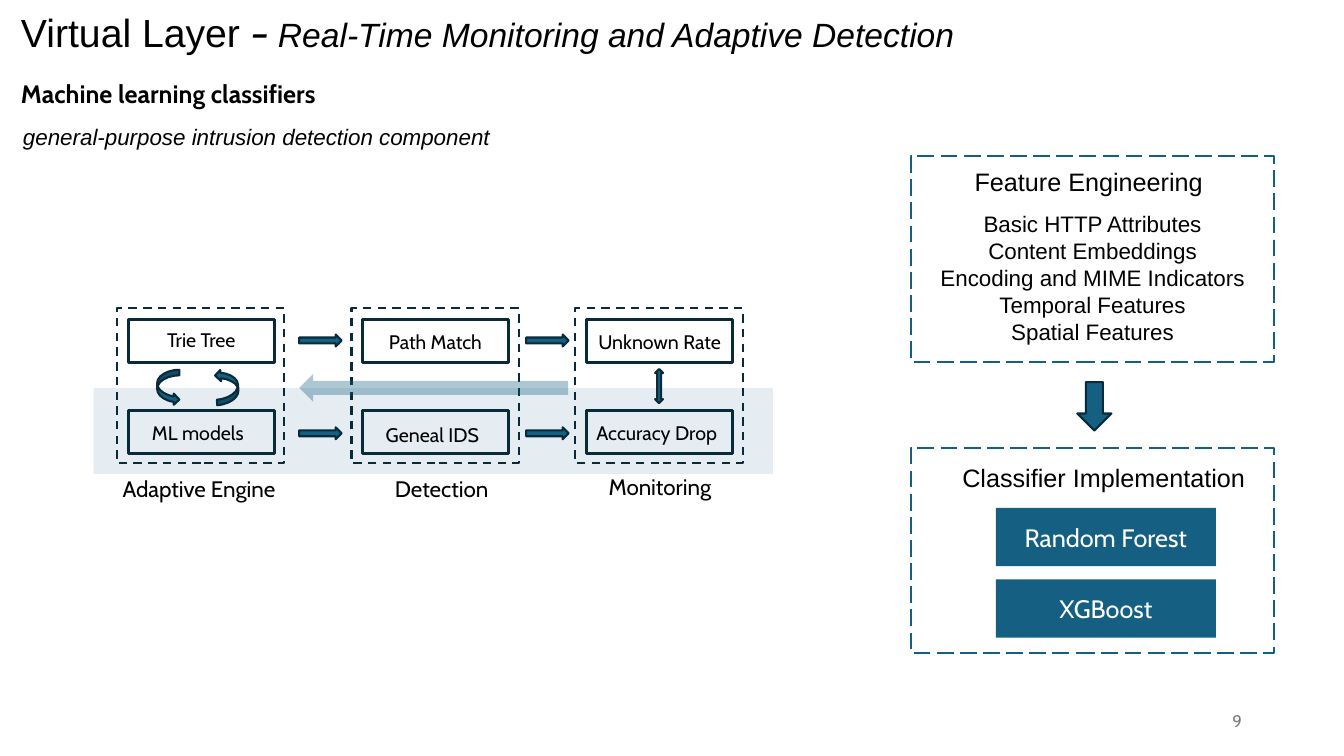
from lxml.etree import SubElement
from pptx import Presentation
from pptx.dml.color import RGBColor
from pptx.enum.dml import MSO_LINE
from pptx.enum.shapes import MSO_SHAPE
from pptx.enum.text import MSO_ANCHOR, PP_ALIGN
from pptx.oxml.ns import qn
from pptx.util import Cm, Pt

TEAL, NAVY, BLACK, WHITE = "156082", "092A39", "000000", "FFFFFF"

# Text formats
TITLE = {"name": "Arial", "size": Pt(28)}
DASH = {"name": "Cabin", "size": Pt(28), "italic": True}
TOPIC = {"name": "Arial", "size": Pt(24), "italic": True}
SUBTITLE = {"name": "Cabin", "size": Pt(18), "bold": True}
REMARK = {"name": "Arial", "size": Pt(16), "italic": True}
HEADING = {"name": "Arial", "size": Pt(18)}
FEATURE = {"name": "Arial", "size": Pt(16)}
CLASSIFIER = {"name": "Cabin", "size": Pt(18)}
STEP = {"name": "Cabin", "size": Pt(14)}
STAGE = {"name": "Cabin", "size": Pt(16)}
PAGE = {"name": "Cabin", "size": Pt(12)}

# Outlines: colour, width, dash
PANEL_LINE = (TEAL, 1.5, MSO_LINE.LONG_DASH)
FRAME_LINE = (NAVY, 1.5, MSO_LINE.DASH)
STEP_LINE = (NAVY, 2, None)
ARROW_LINE = (NAVY, 1.5, None)

# Stage: frame left, then (text, left, top, width) of two steps and the name
STAGES = [
    (2.95, [("Trie Tree", 3.96, 8.13, 2.34), ("ML models", 3.58, 10.49, 2.9)],
     ("Adaptive Engine", 2.84, 11.86, 4.8)),
    (8.86, [("Path Match", 9.55, 8.18, 3.18), ("Geneal IDS", 9.47, 10.52, 3.18)],
     ("Detection", 9.7, 11.84, 3.56)),
    (14.5, [("Unknown Rate", 14.83, 8.18, 3.7), ("Accuracy Drop", 14.78, 10.49, 3.76)],
     ("Monitoring", 15.09, 11.79, 3.66)),
]
FEATURES = ["Basic HTTP Attributes", "Content Embeddings",
            "Encoding and MIME Indicators", "Temporal Features", "Spatial Features"]


def rgb(value):
    return RGBColor.from_string(value)


def add_run(paragraph, text, style, color=BLACK):
    run = paragraph.add_run()
    run.text = text
    for name, value in style.items():
        setattr(run.font, name, value)
    run.font.color.rgb = rgb(color)


def add_text(slide, lines, box, style, align=PP_ALIGN.LEFT,
             anchor=MSO_ANCHOR.TOP, color=BLACK):
    frame = slide.shapes.add_textbox(*map(Cm, box)).text_frame
    frame.word_wrap = True
    frame.vertical_anchor = anchor
    for index, line in enumerate(lines):
        paragraph = frame.add_paragraph() if index else frame.paragraphs[0]
        paragraph.alignment = align
        add_run(paragraph, line, style, color)
    return frame


def add_block(slide, kind, box, fill=None, line=None, opacity=None):
    block = slide.shapes.add_shape(kind, *map(Cm, box))
    block.shadow.inherit = False
    if fill:
        block.fill.solid()
        block.fill.fore_color.rgb = rgb(fill)
    else:
        block.fill.background()
    if opacity:
        tint = block.fill._xPr.find(qn("a:solidFill"))[0]
        SubElement(tint, qn("a:alpha"), val=str(opacity * 1000))
    if line:
        color, width, dash = line
        block.line.color.rgb = rgb(color)
        block.line.width = Pt(width)
        if dash:
            block.line.dash_style = dash
    else:
        block.line.fill.background()
    return block


def add_arrow(slide, kind, box):
    return add_block(slide, kind, box, TEAL, ARROW_LINE)


def add_classifier(slide, name, top):
    button = add_block(slide, MSO_SHAPE.RECTANGLE, (25.1, top, 5.54, 1.47), TEAL)
    button.text_frame.vertical_anchor = MSO_ANCHOR.MIDDLE
    paragraph = button.text_frame.paragraphs[0]
    paragraph.alignment = PP_ALIGN.CENTER
    add_run(paragraph, name, CLASSIFIER, WHITE)


def add_stage(slide, left, steps, name):
    for (text, x, y, width), top in zip(steps, (8.05, 10.34)):
        add_block(slide, MSO_SHAPE.RECTANGLE, (left + 0.28, top, 3.68, 1.09), line=STEP_LINE)
        add_text(slide, [text], (x, y, width, 0.86), STEP)
    add_block(slide, MSO_SHAPE.RECTANGLE, (left, 7.77, 4.22, 3.91), line=FRAME_LINE)
    text, x, y, width = name
    add_text(slide, [text], (x, y, width, 0.94), STAGE)


def add_header(slide):
    title = add_text(slide, ["Virtual Layer "], (0.28, 0.36, 28.42, 1.02), TITLE,
                     anchor=MSO_ANCHOR.MIDDLE).paragraphs[0]
    title.line_spacing = 0.9
    add_run(title, "– ", DASH)
    add_run(title, "Real-Time Monitoring and Adaptive Detection", TOPIC)
    add_text(slide, ["Machine learning classifiers"], (0.28, 1.85, 9.98, 1.02), SUBTITLE)
    add_text(slide, ["general-purpose intrusion detection component"],
             (0.33, 2.97, 12.47, 0.94), REMARK)


def add_pipeline(slide):
    add_block(slide, MSO_SHAPE.RECTANGLE, (2.36, 9.78, 17.12, 2.16), "E3ECF3", opacity=92)
    for stage in STAGES:
        add_stage(slide, *stage)
    # Flow between stages
    for left in (7.54, 13.26):
        for top in (8.43, 10.77):
            add_arrow(slide, MSO_SHAPE.RIGHT_ARROW, (left, top, 1.07, 0.3))
    # Exchange within stages
    add_arrow(slide, MSO_SHAPE.CURVED_RIGHT_ARROW, (3.96, 9.32, 0.56, 0.89))
    back = add_arrow(slide, MSO_SHAPE.CURVED_RIGHT_ARROW, (5.44, 9.3, 0.56, 0.89))
    back.rotation = 175.7
    add_arrow(slide, MSO_SHAPE.UP_DOWN_ARROW, (16.51, 9.3, 0.2, 0.86))
    # Feedback to the engine
    add_block(slide, MSO_SHAPE.LEFT_ARROW, (7.54, 9.42, 6.78, 0.71), TEAL, opacity=35)


def add_panels(slide):
    for top in (3.94, 11.28):
        add_block(slide, MSO_SHAPE.RECTANGLE, (22.96, top, 9.14, 5.18), line=PANEL_LINE)
    add_text(slide, ["Feature Engineering"], (24.31, 4.06, 6.32, 1.02), HEADING)
    add_text(slide, FEATURES, (23.37, 5.18, 8.33, 3.68), FEATURE, PP_ALIGN.CENTER)
    add_arrow(slide, MSO_SHAPE.DOWN_ARROW, (27.15, 9.63, 0.86, 1.22))
    add_text(slide, ["Classifier Implementation"], (23.93, 11.53, 7.77, 1.02),
             HEADING, PP_ALIGN.CENTER)
    add_classifier(slide, "Random Forest", 12.8)
    add_classifier(slide, "XGBoost", 14.6)


def main():
    deck = Presentation()
    deck.slide_width, deck.slide_height = Cm(33.87), Cm(19.05)
    slide = deck.slides.add_slide(deck.slide_layouts[6])
    add_header(slide)
    add_pipeline(slide)
    add_panels(slide)
    # Page number
    add_text(slide, ["9"], (23.93, 17.65, 7.62, 1.02), PAGE, PP_ALIGN.RIGHT,
             MSO_ANCHOR.MIDDLE, "797979")
    deck.save("out.pptx")


if __name__ == "__main__":
    main()
